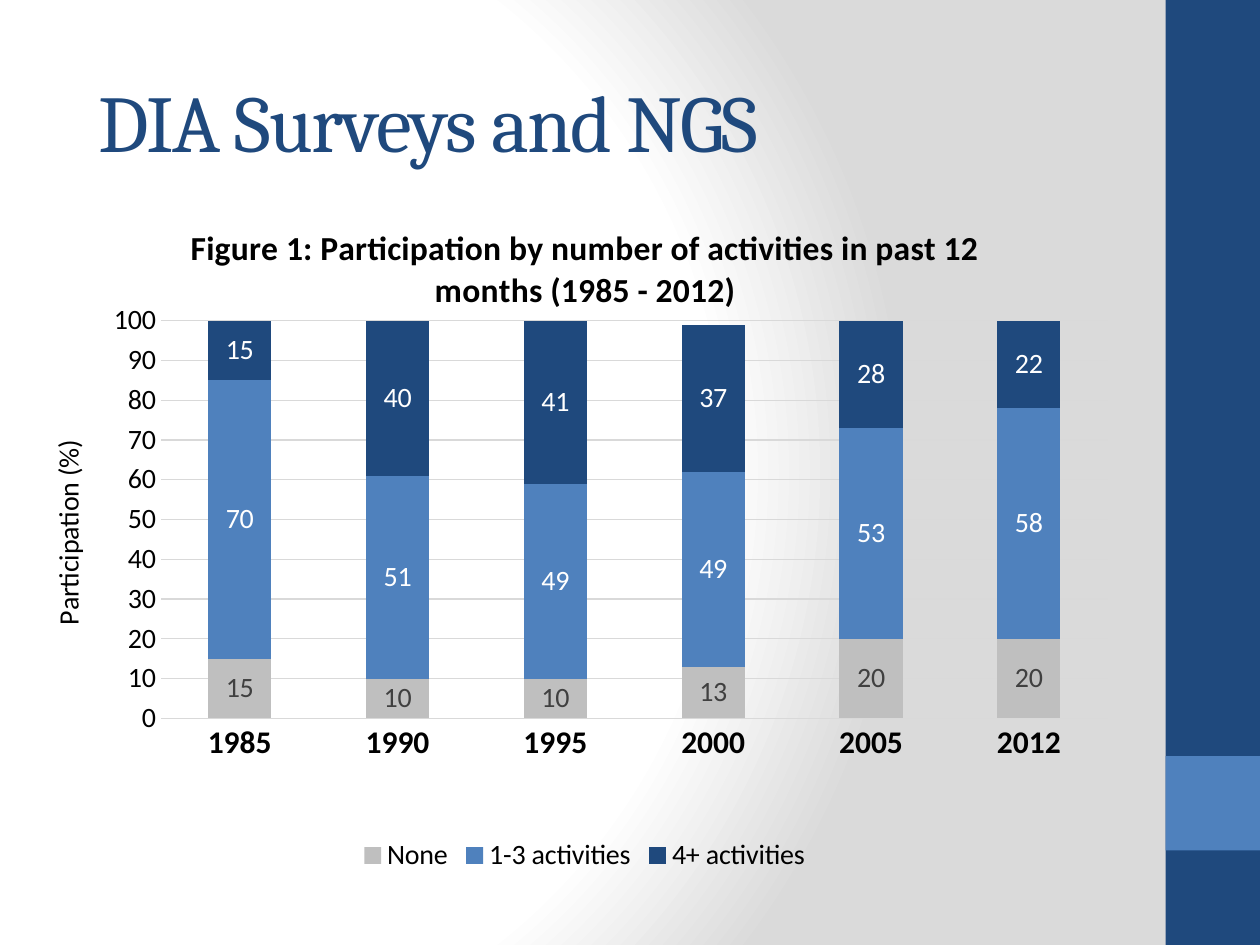
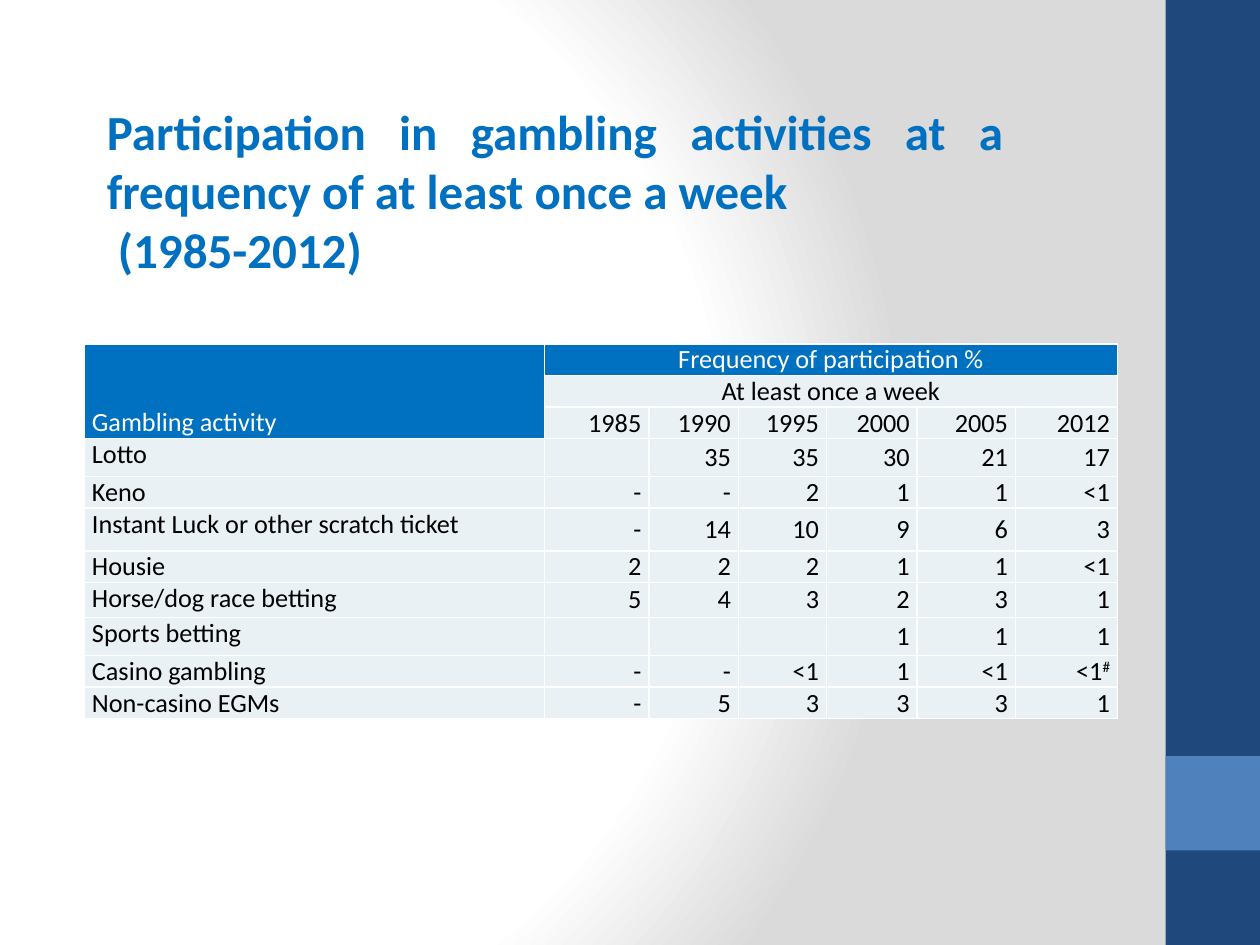
from lxml import etree
from pptx import Presentation
from pptx.chart.data import CategoryChartData
from pptx.dml.color import RGBColor
from pptx.enum.chart import (XL_CHART_TYPE as ChartType, XL_LABEL_POSITION as LabelPosition,
                             XL_LEGEND_POSITION as LegendPosition, XL_TICK_MARK as TickMark)
from pptx.enum.shapes import MSO_SHAPE as Preset
from pptx.enum.text import MSO_ANCHOR as Anchor, PP_ALIGN as Align
from pptx.oxml import parse_xml
from pptx.oxml.ns import nsdecls, qn
from pptx.util import Inches, Pt

NAVY = RGBColor(0x1F, 0x49, 0x7D)
BLUE = RGBColor(0x4F, 0x81, 0xBD)
BRIGHT = RGBColor(0x00, 0x70, 0xC0)
PALE = RGBColor(0xE9, 0xF1, 0xF5)
WHITE = RGBColor(0xFF, 0xFF, 0xFF)
BLACK = RGBColor(0x00, 0x00, 0x00)
CHARCOAL = RGBColor(0x40, 0x40, 0x40)
SILVER = RGBColor(0xBF, 0xBF, 0xBF)
GRID = RGBColor(0xD9, 0xD9, 0xD9)
SHADE = RGBColor(0xDA, 0xDA, 0xDA)
BODY_FONT, TITLE_FONT = "Calibri", "Cambria"

YEARS = ["1985", "1990", "1995", "2000", "2005", "2012"]
PARTICIPATION = [
    ("None", [15, 10, 10, 13, 20, 20], SILVER, CHARCOAL),
    ("1-3 activities", [70, 51, 49, 49, 53, 58], BLUE, WHITE),
    ("4+ activities", [15, 40, 41, 37, 28, 22], NAVY, WHITE),
]
WEEKLY = [
    ["Lotto", "", "35", "35", "30", "21", "17"],
    ["Keno", "-", "-", "2", "1", "1", "<1"],
    ["Instant Luck or other scratch ticket", "-", "14", "10", "9", "6", "3"],
    ["Housie", "2", "2", "2", "1", "1", "<1"],
    ["Horse/dog race betting", "5", "4", "3", "2", "3", "1"],
    ["Sports betting", "", "", "", "1", "1", "1"],
    ["Casino gambling", "-", "-", "<1", "1", "<1", "<1"],
    ["Non-casino EGMs", "-", "5", "3", "3", "3", "1"],
]
COLUMN_WIDTHS = [3.65, 0.83, 0.71, 0.7, 0.72, 0.78, 0.81]
ROW_HEIGHTS = [0.25, 0.25, 0.25, 0.3, 0.25, 0.34, 0.25, 0.28, 0.3, 0.25, 0.25]


def set_font(font, size, color, name=BODY_FONT, bold=False):
    """Apply size, colour, typeface and weight to a font."""
    font.size, font.name, font.bold = Pt(size), name, bold
    font.color.rgb = color


def write(para, text, size=15, color=BLACK, name=BODY_FONT, bold=False, align=None,
          before=0, after=0, tracking=0, raised=0):
    """Append formatted text to a paragraph."""
    span = para.add_run()
    span.text = text
    set_font(span.font, size, color, name, bold)
    if align is not None:
        para.alignment = align
    para.space_before, para.space_after = Pt(before), Pt(after)
    if tracking:
        span.font._element.set("spc", str(tracking * 100))
    if raised:
        span.font._element.set("baseline", str(raised * 1000))


def place(parent, index, **fractions):
    """Give a chart part a manual layout in fractions of the chart."""
    for old in parent.findall(qn("c:layout")):
        parent.remove(old)
    target = '<c:layoutTarget val="inner"/>' if "w" in fractions else ""
    modes = "".join(f'<c:{key}Mode val="edge"/>' for key in "xy")
    sizes = "".join(f'<c:{key} val="{value}"/>' for key, value in fractions.items())
    parent.insert(index, parse_xml(
        f'<c:layout {nsdecls("c")}><c:manualLayout>{target}{modes}{sizes}'
        '</c:manualLayout></c:layout>'))


def set_borders(cell):
    """Draw thin white lines around a cell."""
    properties = cell._tc.get_or_add_tcPr()
    for index, side in enumerate(["lnL", "lnR", "lnT", "lnB"]):
        properties.insert(index, parse_xml(
            f'<a:{side} {nsdecls("a")} w="{Pt(1)}"><a:solidFill>'
            f'<a:srgbClr val="{WHITE}"/></a:solidFill></a:{side}>'))


class SlideBuilder:
    """Hold the shared style and the slide being built."""

    def __init__(self):
        """Start an empty 10 by 7.5 inch deck."""
        self.deck = Presentation()
        self.deck.slide_width, self.deck.slide_height = Inches(10), Inches(7.5)
        self.page = None

    def new_page(self):
        """Add a slide with the shared background and side bands."""
        self.page = self.deck.slides.add_slide(self.deck.slide_layouts[6])
        self.background()
        self.band(0, 7.5, NAVY)
        self.band(6, 0.75, BLUE)

    def background(self):
        """Fill the slide with a radial white to grey gradient."""
        self.page.background.fill.gradient()
        gradient = self.page.element.find(".//" + qn("a:gradFill"))
        for child in list(gradient):
            gradient.remove(child)
        stops = etree.SubElement(gradient, qn("a:gsLst"))
        for position, color in [(0, WHITE), (75, WHITE), (100, SHADE)]:
            stop = etree.SubElement(stops, qn("a:gs"), pos=str(position * 1000))
            etree.SubElement(stop, qn("a:srgbClr"), val=str(color))
        circle = etree.SubElement(gradient, qn("a:path"), path="circle")
        etree.SubElement(circle, qn("a:fillToRect"), l="20000", t="50000", r="100000", b="50000")

    def band(self, top, height, color):
        """Draw a block of the right-hand band."""
        box = self.page.shapes.add_shape(Preset.RECTANGLE, Inches(9.25), Inches(top),
                                         Inches(0.75), Inches(height))
        box.shadow.inherit = False
        box.fill.solid()
        box.fill.fore_color.rgb = color
        box.line.fill.background()

    def title(self, lines, left, top, width, height, **style):
        """Add a title with one paragraph for each line."""
        box = self.page.shapes.add_textbox(Inches(left), Inches(top), Inches(width), Inches(height))
        frame = box.text_frame
        frame.word_wrap = True
        for index, line in enumerate(lines):
            para = frame.add_paragraph() if index else frame.paragraphs[0]
            write(para, line, **style)

    def stacked_chart(self, left, top, width, height, heading, axis_heading):
        """Add the stacked columns of participation by year."""
        data = CategoryChartData(number_format="General")
        data.categories = YEARS
        for name, values, *_ in PARTICIPATION:
            data.add_series(name, values)
        chart = self.page.shapes.add_chart(ChartType.COLUMN_STACKED, Inches(left), Inches(top),
                                           Inches(width), Inches(height), data).chart
        set_font(chart.font, 16, BLACK)
        chart.has_title = True
        write(chart.chart_title.text_frame.paragraphs[0], heading, size=19.2, bold=True)
        place(chart.chart_title._element, 1, x=0.13, y=0.02)
        chart.has_legend = True
        chart.legend.position = LegendPosition.BOTTOM
        chart.legend.include_in_layout = False
        set_font(chart.legend.font, 16, BLACK)

        plot = chart.plots[0]
        plot.gap_width, plot.overlap, plot.vary_by_categories = 150, 100, False
        place(chart._chartSpace.find(".//" + qn("c:plotArea")), 0, x=0.108, y=0.173, w=0.876, h=0.59)
        for series, (_, _, fill, label_color) in zip(plot.series, PARTICIPATION):
            series.format.fill.solid()
            series.format.fill.fore_color.rgb = fill
            labels = series.data_labels
            labels.show_value, labels.position = True, LabelPosition.CENTER
            set_font(labels.font, 16, label_color)
        self.axes(chart, axis_heading)

    def axes(self, chart, heading):
        """Style both axes of a chart."""
        years, percent = chart.category_axis, chart.value_axis
        for axis, size, bold in [(years, 18, True), (percent, 16, False)]:
            axis.major_tick_mark = axis.minor_tick_mark = TickMark.NONE
            set_font(axis.tick_labels.font, size, BLACK, bold=bold)
        percent.minimum_scale, percent.maximum_scale, percent.major_unit = 0, 100, 10
        percent.has_major_gridlines = True
        for line in (years.format.line, percent.major_gridlines.format.line):
            line.color.rgb, line.width = GRID, Pt(0.75)
        percent.format.line.fill.background()
        percent.has_title = True
        write(percent.axis_title.text_frame.paragraphs[0], heading, size=16)

    def cell(self, cell, text, fill=PALE, anchor=Anchor.MIDDLE, **style):
        """Fill a table cell and write its text."""
        cell.fill.solid()
        cell.fill.fore_color.rgb = fill
        cell.vertical_anchor = anchor
        cell.margin_left = cell.margin_right = Inches(0.06)
        cell.margin_top = cell.margin_bottom = 0
        set_borders(cell)
        if text:
            write(cell.text_frame.paragraphs[0], text, **style)

    def weekly_table(self, left, top):
        """Add the table of weekly participation by activity."""
        table = self.page.shapes.add_table(
            len(ROW_HEIGHTS), len(COLUMN_WIDTHS), Inches(left), Inches(top),
            Inches(sum(COLUMN_WIDTHS)), Inches(sum(ROW_HEIGHTS))).table
        table.first_row = table.horz_banding = False
        for column, width in zip(table.columns, COLUMN_WIDTHS):
            column.width = Inches(width)
        for row, height in zip(table.rows, ROW_HEIGHTS):
            row.height = Inches(height)
        table.cell(0, 0).merge(table.cell(2, 0))
        for row in (0, 1):
            table.cell(row, 1).merge(table.cell(row, 6))

        headings = [["Gambling activity", "Frequency of participation %"] + [""] * 5,
                    ["", "At least once a week"] + [""] * 5,
                    [""] + YEARS]
        for row, texts in enumerate(headings):
            for column, text in enumerate(texts):
                bright = row == 0 or column == 0
                align = Align.LEFT if column == 0 else Align.CENTER if row < 2 else Align.RIGHT
                self.cell(table.cell(row, column), text, fill=BRIGHT if bright else PALE,
                          anchor=Anchor.BOTTOM if column == 0 else Anchor.MIDDLE,
                          color=WHITE if bright else BLACK, align=align, after=1)
        for row, texts in enumerate(WEEKLY, start=len(headings)):
            before = 3 if row == len(headings) else 0
            for column, text in enumerate(texts):
                self.cell(table.cell(row, column), text, before=before,
                          anchor=Anchor.MIDDLE if column else Anchor.TOP,
                          align=Align.RIGHT if column else Align.LEFT)
        write(table.cell(9, 6).text_frame.paragraphs[0], "#", raised=30)


def main():
    """Build both slides and save the deck."""
    builder = SlideBuilder()
    builder.new_page()
    builder.stacked_chart(0.35, 1.62, 8.58, 5.35,
                          "Figure 1: Participation by number of activities in past 12 months (1985 - 2012)",
                          "Participation (%)")
    builder.title(["DIA Surveys and NGS"], 0.68, 0.52, 8.33, 1.01,
                  size=46, color=NAVY, name=TITLE_FONT, tracking=-1)

    builder.new_page()
    builder.weekly_table(0.67, 2.73)
    builder.title(["Participation in gambling activities at a frequency of at least once a week",
                   " (1985-2012)"], 0.75, 0.76, 7.31, 1.51,
                  size=28, color=BRIGHT, bold=True, align=Align.JUSTIFY)
    builder.deck.save("out.pptx")


if __name__ == "__main__":
    main()
